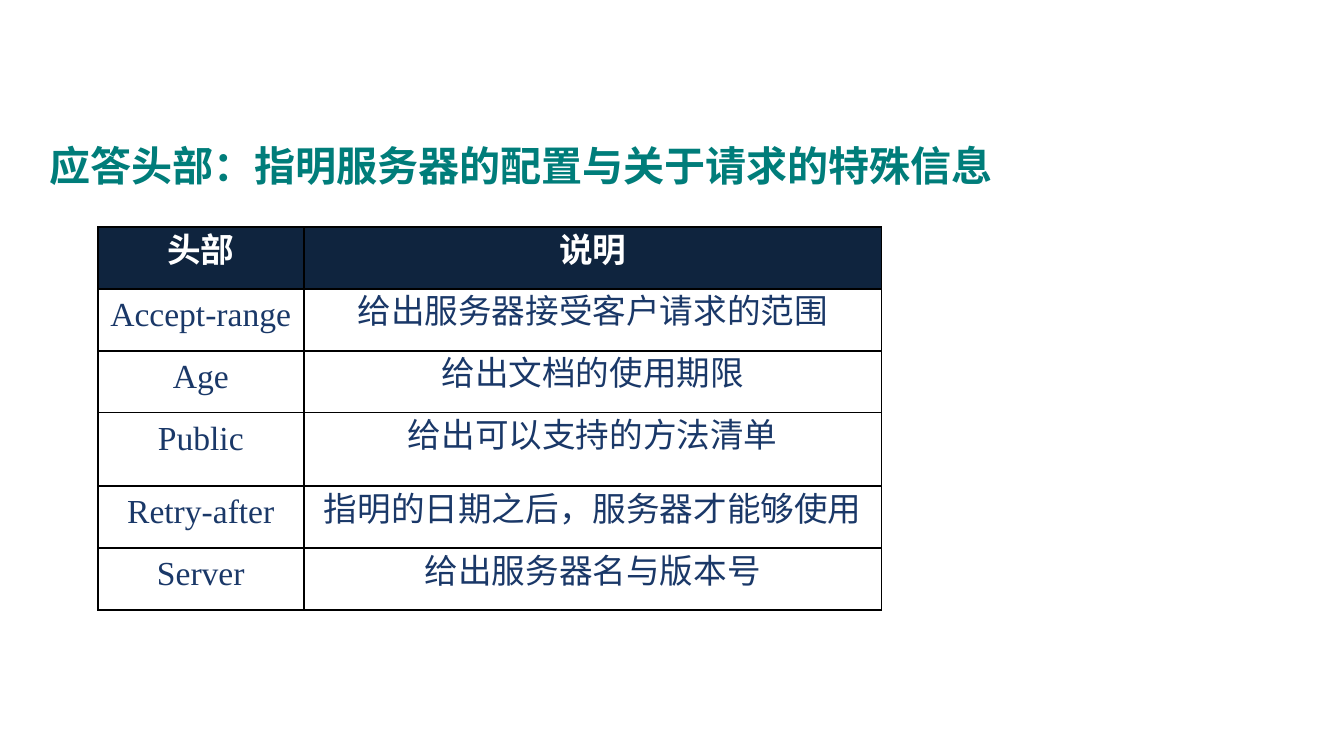
from lxml.etree import SubElement
from pptx import Presentation
from pptx.dml.color import RGBColor as RGB
from pptx.enum.text import MSO_ANCHOR as Anchor, MSO_AUTO_SIZE as AutoSize, PP_ALIGN as Align
from pptx.oxml.ns import qn
from pptx.util import Cm, Pt

COLORS = {"title": "007D7A", "header": "0F243E", "header_text": "FFFFFF",
          "body": "FFFFFF", "body_text": "1A3868", "border": "000000"}

ROWS = [
    ("头部", "说明"),
    ("Accept-range", "给出服务器接受客户请求的范围"),
    ("Age", "给出文档的使用期限"),
    ("Public", "给出可以支持的方法清单"),
    ("Retry-after", "指明的日期之后，服务器才能够使用"),
    ("Server", "给出服务器名与版本号"),
]


def write(tf, text, size=18, color="body_text", bold=False, align=Align.CENTER, spacing=None):
    p = tf.paragraphs[0]
    p.alignment = align
    if spacing:
        p.line_spacing = Pt(spacing)
    r = p.add_run()
    r.text = text
    r.font.name = "Times New Roman"
    r.font.size = Pt(size)
    r.font.bold = bold
    r.font.color.rgb = RGB.from_string(COLORS[color])


class SlideBuilder:
    def __init__(self, s):
        self.s = s

    def title(self, text, x, y, w, h):
        sp = self.s.shapes.title
        sp.left, sp.top, sp.width, sp.height = Cm(x), Cm(y), Cm(w), Cm(h)
        tf = sp.text_frame
        tf.auto_size = AutoSize.NONE
        tf.vertical_anchor = Anchor.MIDDLE
        write(tf, text, size=22, color="title", bold=True, align=Align.LEFT)

    def borders(self, cell):
        tc_pr = cell._tc.get_or_add_tcPr()
        for side in ("lnL", "lnR", "lnT", "lnB"):
            ln = SubElement(tc_pr, qn(f"a:{side}"), w=str(Pt(1)))
            fill = SubElement(ln, qn("a:solidFill"))
            SubElement(fill, qn("a:srgbClr"), val=COLORS["border"])

    def table(self, rows, x, y, widths, heights):
        frame = self.s.shapes.add_table(len(rows), len(widths), Cm(x), Cm(y),
                                        Cm(sum(widths)), Cm(sum(heights)))
        table = frame.table
        for column, width in zip(table.columns, widths):
            column.width = Cm(width)
        for i, (row, height) in enumerate(zip(rows, heights)):
            table.rows[i].height = Cm(height)
            kind = "header" if i == 0 else "body"
            for j, text in enumerate(row):
                cell = table.cell(i, j)
                self.borders(cell)
                cell.fill.solid()
                cell.fill.fore_color.rgb = RGB.from_string(COLORS[kind])
                cell.margin_left = cell.margin_right = Cm(0.18)
                cell.margin_top, cell.margin_bottom = Pt(12), 0
                write(cell.text_frame, text, color=f"{kind}_text",
                      bold=i == 0, spacing=12)


def main():
    prs = Presentation()
    prs.slide_width, prs.slide_height = Cm(25.4), Cm(14.29)
    slide = SlideBuilder(prs.slides.add_slide(prs.slide_layouts[5]))

    # Heading
    slide.title("应答头部：指明服务器的配置与关于请求的特殊信息", 0.69, 2.08, 19, 2.08)

    # Response headers, with a taller row for Public
    heights = [1.39 if name == "Public" else 1.17 for name, _ in ROWS]
    slide.table(ROWS, 1.85, 4.29, [3.89, 10.92], heights)

    prs.save("out.pptx")


if __name__ == "__main__":
    main()
